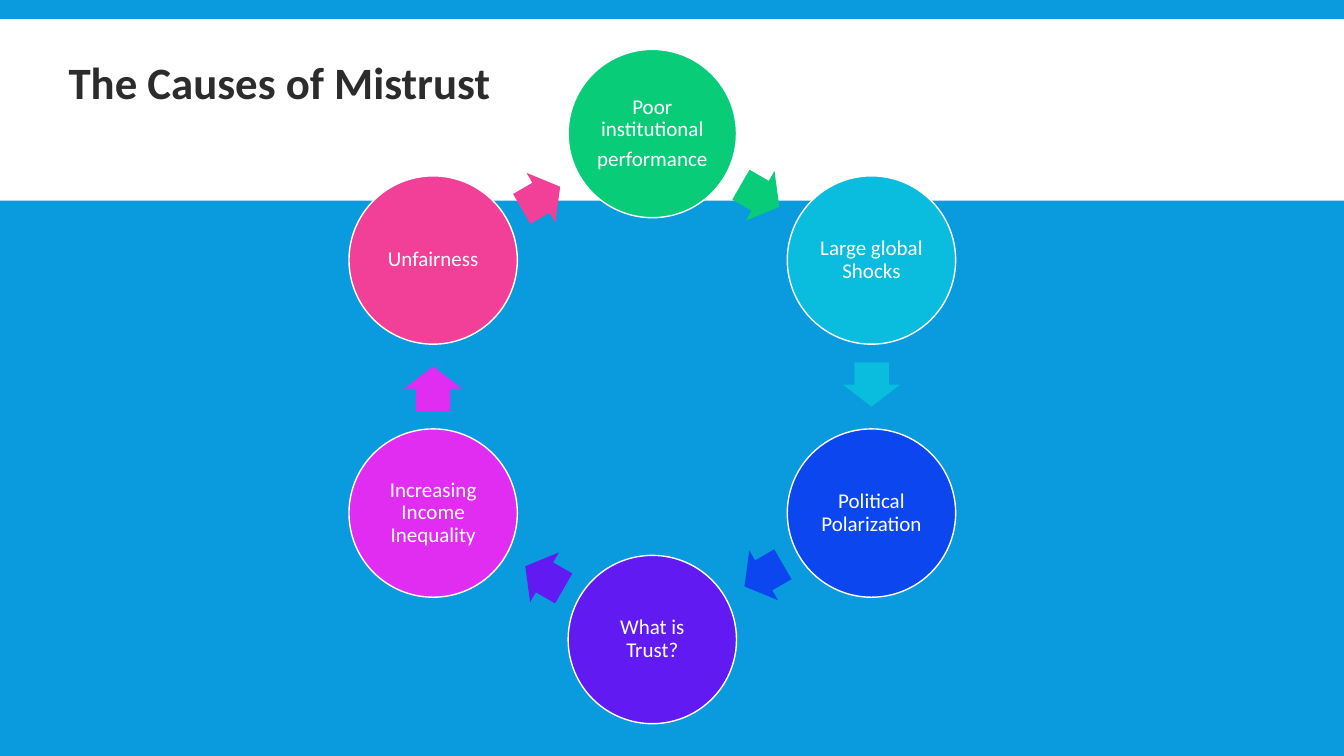
import math

from pptx import Presentation
from pptx import util as u
from pptx.dml.color import RGBColor
from pptx.enum import shapes, text

PX = 9144  # EMU per px, 100 px to the inch
SLIDE_WIDTH, SLIDE_HEIGHT = 1333, 750
FONT = "Calibri"

BLUE = RGBColor(0x09, 0x9B, 0xDD)
WHITE = RGBColor(0xFF, 0xFF, 0xFF)
CHARCOAL = RGBColor(0x2C, 0x2C, 0x2C)
GREEN = RGBColor(0x08, 0xCC, 0x78)
CYAN = RGBColor(0x0A, 0xBC, 0xDD)
ROYAL = RGBColor(0x0C, 0x46, 0xEE)
VIOLET = RGBColor(0x61, 0x1A, 0xF2)
MAGENTA = RGBColor(0xE1, 0x2D, 0xF2)
PINK = RGBColor(0xF2, 0x40, 0x99)

# Clockwise from the top: colour and paragraphs
CAUSES = [
    (GREEN, ["Poor institutional", "performance"]),
    (CYAN, ["Large global Shocks"]),
    (ROYAL, ["Political Polarization"]),
    (VIOLET, ["What is Trust?"]),
    (MAGENTA, ["Increasing Income Inequality"]),
    (PINK, ["Unfairness"]),
]


def px(*lengths):
    return [u.Emu(round(length * PX)) for length in lengths]


def add_run(paragraph, wording, size, color, bold=False):
    run = paragraph.add_run()
    run.text = wording
    run.font.name = FONT
    run.font.size = u.Pt(size)
    run.font.bold = bold
    run.font.color.rgb = color


def add_filled(slide, kind, box, color):
    shape = slide.shapes.add_shape(kind, *px(*box))
    shape.shadow.inherit = False
    shape.fill.solid()
    shape.fill.fore_color.rgb = color
    shape.line.fill.background()
    return shape


def centred_box(x, y, width, height):
    return x - width / 2, y - height / 2, width, height


def add_circle(slide, box, color, paragraphs):
    circle = add_filled(slide, shapes.MSO_SHAPE.OVAL, box, color)
    circle.line.color.rgb = WHITE
    circle.line.width = u.Pt(1)
    frame = circle.text_frame
    frame.word_wrap = True
    frame.vertical_anchor = text.MSO_ANCHOR.MIDDLE
    frame.margin_left, frame.margin_top, frame.margin_right, frame.margin_bottom = px(2, 2, 2, 2)
    for index, wording in enumerate(paragraphs):
        paragraph = frame.add_paragraph() if index else frame.paragraphs[0]
        paragraph.alignment = text.PP_ALIGN.CENTER
        paragraph.line_spacing = 0.9
        paragraph.space_after = u.Pt(5)
        add_run(paragraph, wording, 15, WHITE)


def add_cycle(slide, box):
    """Circles on a ring as high as the box, with an arrow from each to the next."""
    left, top, width, height = box
    diameter, arrow_length, arrow_height, setback = 167, 44, 57, 2
    center_x, center_y = left + width / 2, top + height / 2
    radius = (height - diameter) / 2
    step = 360 / len(CAUSES)
    mid_radius = radius * math.cos(math.radians(step / 2))

    for index, (color, paragraphs) in enumerate(CAUSES):
        angle = math.radians(index * step)
        x = center_x + radius * math.sin(angle)
        y = center_y - radius * math.cos(angle)
        add_circle(slide, centred_box(x, y, diameter, diameter), color, paragraphs)

        # Arrow halfway to the next circle, pulled back along its direction
        heading = (index + 0.5) * step
        angle = math.radians(heading)
        x = center_x + mid_radius * math.sin(angle) - setback * math.cos(angle)
        y = center_y - mid_radius * math.cos(angle) - setback * math.sin(angle)
        arrow = add_filled(slide, shapes.MSO_SHAPE.RIGHT_ARROW,
                           centred_box(x, y, arrow_length, arrow_height), color)
        arrow.adjustments[0] = 0.6
        arrow.adjustments[1] = 0.5
        arrow.rotation = heading


def add_title(slide, box, wording):
    title = slide.shapes.title
    title.left, title.top, title.width, title.height = px(*box)
    frame = title.text_frame
    frame.word_wrap = True
    frame.auto_size = text.MSO_AUTO_SIZE.NONE
    frame.vertical_anchor = text.MSO_ANCHOR.TOP
    paragraph = frame.paragraphs[0]
    paragraph.alignment = text.PP_ALIGN.LEFT
    add_run(paragraph, wording, 32, CHARCOAL, bold=True)
    # Bring the title in front of the band
    title.element.getparent().append(title.element)


def main():
    presentation = Presentation()
    presentation.slide_width, presentation.slide_height = px(SLIDE_WIDTH, SLIDE_HEIGHT)
    slide = presentation.slides.add_slide(presentation.slide_layouts[5])

    # Background and header band
    slide.background.fill.solid()
    slide.background.fill.fore_color.rgb = BLUE
    add_filled(slide, shapes.MSO_SHAPE.RECTANGLE, (0, 19, SLIDE_WIDTH, 180), WHITE)

    # Cycle and title
    add_cycle(slide, (346, 49, 602, 669))
    add_title(slide, (58, 49, 442, 118), "The Causes of Mistrust")

    presentation.save("out.pptx")


if __name__ == "__main__":
    main()
